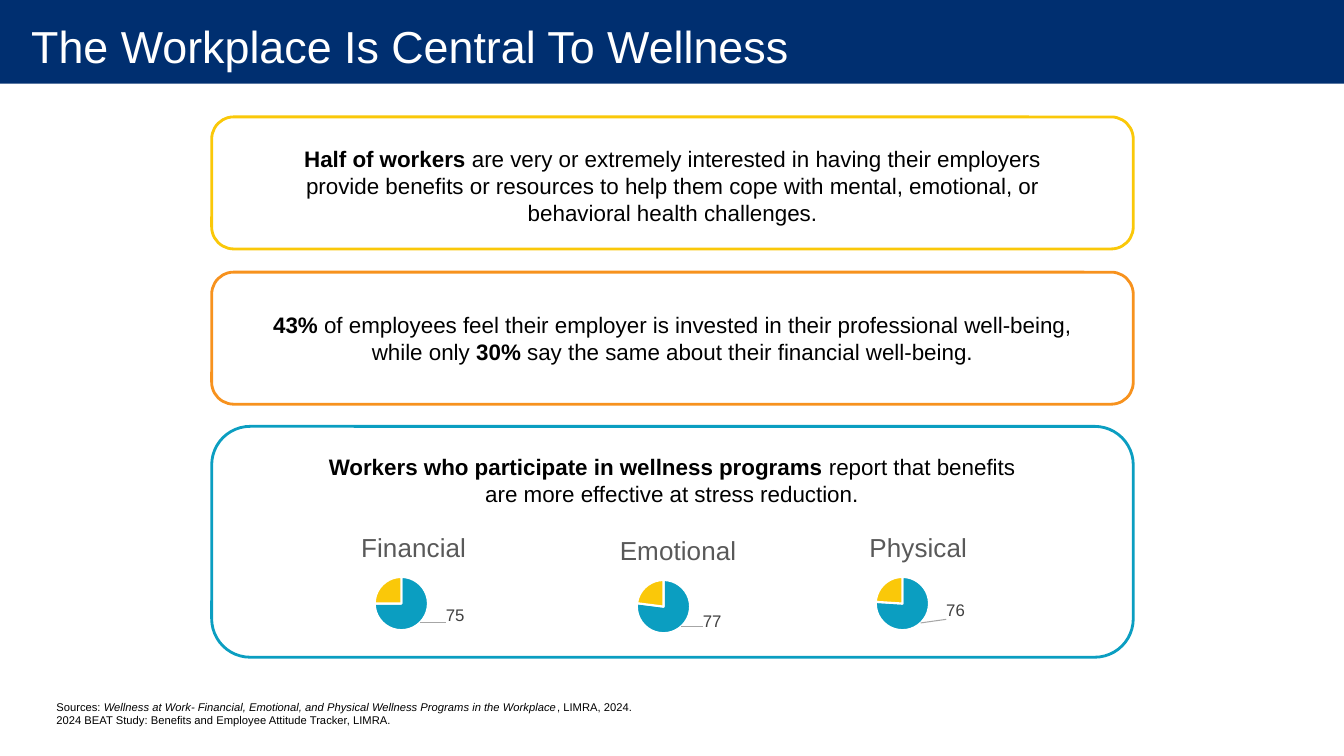
import pptx
import pptx.chart.data
import pptx.dml.color
import pptx.enum.chart
import pptx.enum.shapes
import pptx.enum.text
import pptx.oxml
import pptx.oxml.ns
import pptx.util

Inches = pptx.util.Inches
Pt = pptx.util.Pt
Align = pptx.enum.text.PP_ALIGN
Anchor = pptx.enum.text.MSO_ANCHOR
Shape = pptx.enum.shapes.MSO_SHAPE


class Theme:
    font = "Arial"
    navy, teal, orange, gold = "002F70", "0B9EC1", "F7921E", "FAC809"
    white, black, gray, dark, rule = "FFFFFF", "000000", "595959", "404040", "A6A6A6"
    title, body, head, label, note = 32, 16, 18.6, 12, 8


def rgb(code):
    return pptx.dml.color.RGBColor.from_string(code)


def style(font, size, color):
    font.name = Theme.font
    font.size = Pt(size)
    font.color.rgb = rgb(color)


def add_box(slide, kind, area, fill, line=None):
    box = slide.shapes.add_shape(kind, *map(Inches, area))
    box.shadow.inherit = False
    box.fill.solid()
    box.fill.fore_color.rgb = rgb(fill)
    if line:
        box.line.color.rgb = rgb(line)
        box.line.width = Pt(2)
    else:
        box.line.fill.background()
    return box


def add_title(slide, text):
    band = add_box(slide, Shape.RECTANGLE, (0, -0.03, 13.33, 0.86), Theme.navy)
    slide.shapes._spTree.insert(2, band._element)  # behind the title
    title = slide.shapes.title
    title.left, title.top = Inches(0.01), Inches(-0.03)
    title.width, title.height = Inches(13.33), Inches(0.97)
    frame = title.text_frame
    frame.text = text
    frame.auto_size = pptx.enum.text.MSO_AUTO_SIZE.NONE
    frame.vertical_anchor = Anchor.MIDDLE
    frame.margin_left, frame.margin_right = Inches(0.3), Inches(0.2)
    frame.margin_top = frame.margin_bottom = 0
    para = frame.paragraphs[0]
    para.alignment = Align.LEFT
    style(para.font, Theme.title, Theme.white)


def add_text(slide, area, lines, size, align=Align.LEFT, anchor=Anchor.TOP):
    """Each line is a list of (text, mark); mark is "", "b" or "i"."""
    frame = slide.shapes.add_textbox(*map(Inches, area)).text_frame
    frame.word_wrap = True
    frame.vertical_anchor = anchor
    for num, line in enumerate(lines):
        para = frame.add_paragraph() if num else frame.paragraphs[0]
        para.alignment = align
        style(para.font, size, Theme.black)
        for text, mark in line:
            run = para.add_run()
            run.text = text
            if mark == "b":
                run.font.bold = True
            elif mark == "i":
                run.font.italic = True


def set_layout(parent, index, parts):
    """Give a chart part a manual layout, in shares of the chart."""
    for old in parent.findall(pptx.oxml.ns.qn("c:layout")):
        parent.remove(old)
    inner = "".join(f'<c:{key} val="{val}"/>' for key, val in parts.items())
    parent.insert(index, pptx.oxml.parse_xml(
        f'<c:layout {pptx.oxml.ns.nsdecls("c")}>'
        f"<c:manualLayout>{inner}</c:manualLayout></c:layout>"))


def add_pie(slide, area, name, share, head_x, shift):
    data = pptx.chart.data.CategoryChartData()
    data.categories = ["1", "2"]
    data.add_series("Series 1", (share, 100 - share))
    chart = slide.shapes.add_chart(
        pptx.enum.chart.XL_CHART_TYPE.PIE, *map(Inches, area), data).chart
    style(chart.font, 10, Theme.black)
    chart.has_legend = False

    # Heading and plot place
    edge = {"xMode": "edge", "yMode": "edge"}
    chart.has_title = True
    frame = chart.chart_title.text_frame
    frame.text = name
    style(frame.paragraphs[0].font, Theme.head, Theme.gray)
    frame.paragraphs[0].font.bold = False
    set_layout(chart.chart_title._element, 1, {**edge, "x": head_x, "y": 0.1})
    set_layout(chart._chartSpace.chart.plotArea, 0, {
        "layoutTarget": "inner", **edge,
        "x": 0.4, "y": 0.44, "w": 0.15, "h": 0.35})

    # Slices
    series = chart.plots[0].series[0]
    for num, color in enumerate((Theme.teal, Theme.gold)):
        slice_ = series.points[num].format
        slice_.fill.solid()
        slice_.fill.fore_color.rgb = rgb(color)
        slice_.line.color.rgb = rgb(Theme.white)
        slice_.line.width = Pt(1.5)

    # Value with leader line
    series.data_labels.show_value = False
    label = series.points[0].data_label
    style(label.font, Theme.label, Theme.dark)
    label.position = pptx.enum.chart.XL_LABEL_POSITION.BEST_FIT
    group = series.data_labels._element
    set_layout(group.find(pptx.oxml.ns.qn("c:dLbl")), 1,
               {"x": shift[0], "y": shift[1]})
    group.append(pptx.oxml.parse_xml(
        f'<c:leaderLines {pptx.oxml.ns.nsdecls("c", "a")}><c:spPr>'
        f'<a:ln w="9525"><a:solidFill><a:srgbClr val="{Theme.rule}"/>'
        "</a:solidFill></a:ln></c:spPr></c:leaderLines>"))


def main():
    deck = pptx.Presentation()
    deck.slide_width, deck.slide_height = Inches(13.33), Inches(7.5)
    slide = deck.slides.add_slide(deck.slide_layouts[5])
    add_title(slide, "The Workplace Is Central To Wellness")

    # Framed findings: top, height, line colour, text area, text
    cards = [
        (1.16, 1.31, Theme.gold, (2.62, 1.39, 8.1, 0.91), [
            ("Half of workers ", "b"),
            ("are very or extremely interested in having their employers "
             "provide benefits or resources to help them cope with mental, "
             "emotional, or behavioral health challenges.", "")]),
        (2.7, 1.31, Theme.orange, (2.42, 3.04, 8.5, 0.64), [
            ("43% ", "b"),
            ("of employees feel their employer is invested in their "
             "professional well-being, while only ", ""),
            ("30% ", "b"),
            ("say the same about their financial well-being.", "")]),
        (4.23, 2.29, Theme.teal, (3.01, 4.45, 7.31, 0.64), [
            ("Workers who participate in wellness programs ", "b"),
            ("report that benefits are more effective at stress "
             "reduction.", "")]),
    ]
    for top, high, color, area, line in cards:
        add_box(slide, Shape.ROUNDED_RECTANGLE, (2.1, top, 9.14, high),
                Theme.white, color)
        add_text(slide, area, [line], Theme.body, Align.CENTER)

    # Pies: left, top, name, share, heading place, label shift
    pies = [
        (2.29, 5.06, "Financial", 75, 0.35, (0.06, -0.13)),
        (4.89, 5.09, "Emotional", 77, 0.34, (0.05, -0.12)),
        (7.26, 5.06, "Physical", 76, 0.37, (0.06, -0.17)),
    ]
    for left, top, *rest in pies:
        add_pie(slide, (left, top, 3.56, 1.51), *rest)

    # Sources
    add_text(slide, (0.46, 6.54, 6.08, 0.72), [
        [("Sources: ", ""),
         ("Wellness at Work- Financial, Emotional, and Physical Wellness "
          "Programs in the Workplace", "i"),
         (", LIMRA, 2024.", "")],
        [("2024 BEAT Study: Benefits and Employee Attitude Tracker, LIMRA.", "")],
    ], Theme.note, anchor=Anchor.BOTTOM)

    deck.save("out.pptx")


if __name__ == "__main__":
    main()
